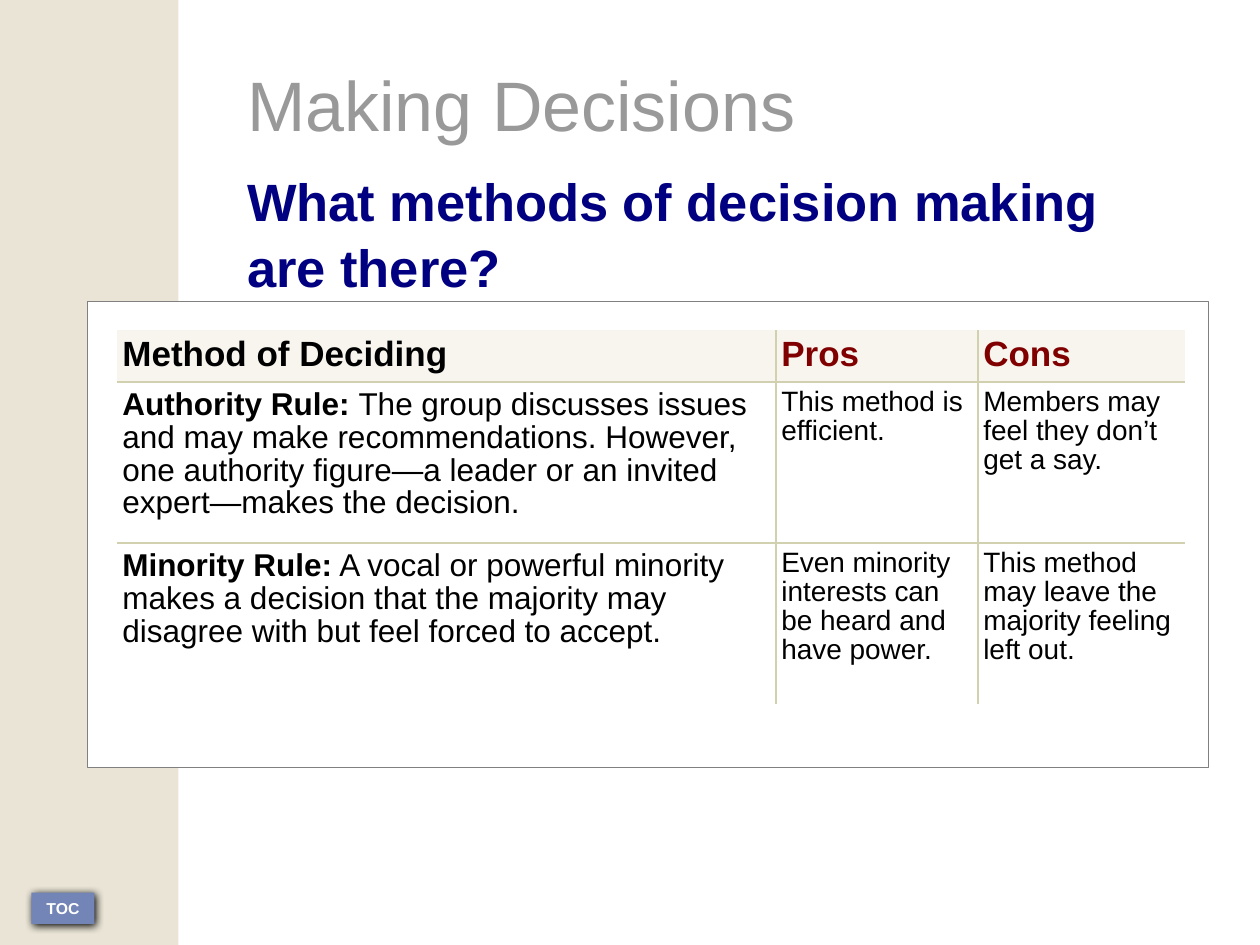
from lxml.etree import SubElement
from pptx import Presentation
from pptx.dml.color import RGBColor
from pptx.enum.shapes import MSO_SHAPE
from pptx.enum.text import MSO_ANCHOR, MSO_AUTO_SIZE, PP_ALIGN
from pptx.oxml import parse_xml
from pptx.oxml.ns import nsdecls, qn
from pptx.util import Pt

WHITE = RGBColor(0xFF, 0xFF, 0xFF)
BLACK = RGBColor(0, 0, 0)
SAND = RGBColor(0xE9, 0xE4, 0xD5)
CREAM = RGBColor(0xF7, 0xF5, 0xED)
OLIVE = RGBColor(0xD1, 0xD1, 0xB0)
GRAY = RGBColor(0x99, 0x99, 0x99)
OUTLINE = RGBColor(0x80, 0x80, 0x80)
NAVY = RGBColor(0, 0, 0x80)
MAROON = RGBColor(0x80, 0, 0)
BLUE = RGBColor(0x73, 0x84, 0xB6)


def add_block(kind, left, top, width, height, color):
    block = page.shapes.add_shape(kind, Pt(left), Pt(top), Pt(width), Pt(height))
    block.shadow.inherit = False
    block.fill.solid()
    block.fill.fore_color.rgb = color
    block.line.fill.background()
    return block


def add_span(para, text, size, color, bold):
    span = para.add_run()
    span.text = text
    for name, value in {"name": "Arial", "size": Pt(size), "bold": bold}.items():
        setattr(span.font, name, value)
    span.font.color.rgb = color


deck = Presentation()
deck.slide_width, deck.slide_height = Pt(720), Pt(540)
page = deck.slides.add_slide(deck.slide_layouts[5])

heading = page.shapes.title
for name, value in {"left": 134, "top": 27.4, "width": 550, "height": 475}.items():
    setattr(heading, name, Pt(value))
frame = heading.text_frame
frame.word_wrap = True
frame.auto_size = MSO_AUTO_SIZE.NONE
frame.vertical_anchor = MSO_ANCHOR.TOP
frame.margin_top = Pt(5.5)
lines = [
    ("Making Decisions", 40, GRAY, False, 11.5),
    ("What methods of decision making are there?", 30, NAVY, True, 2.9),
]
for index, (text, size, color, bold, after) in enumerate(lines):
    para = frame.add_paragraph() if index else frame.paragraphs[0]
    para.alignment = PP_ALIGN.LEFT
    para.line_spacing = 1.05
    para.space_after = Pt(after)
    add_span(para, text, size, color, bold)

add_block(MSO_SHAPE.RECTANGLE, 0, 0, 102, 540, SAND)

button = add_block(MSO_SHAPE.RECTANGLE, 18, 510, 36, 18, BLUE)
effects = button._element.spPr.find(qn("a:effectLst"))
effects.append(parse_xml(
    f'<a:outerShdw {nsdecls("a")} blurRad="{Pt(5)}" dist="{Pt(1.4)}" dir="2700000" '
    'algn="ctr" rotWithShape="0"><a:srgbClr val="000000"/></a:outerShdw>'))
button.text_frame.vertical_anchor = MSO_ANCHOR.MIDDLE
label = button.text_frame.paragraphs[0]
label.alignment = PP_ALIGN.CENTER
add_span(label, "TOC", 9, WHITE, True)

panel = add_block(MSO_SHAPE.ROUNDED_RECTANGLE, 50, 172.2, 640.6, 266.4, WHITE)
panel.adjustments[0] = 0
panel.line.color.rgb = OUTLINE
panel.line.width = Pt(0.71)

rows = [
    [[("Method of Deciding", True)], [("Pros", True)], [("Cons", True)]],
    [
        [("Authority Rule: ", True),
         ("The group discusses issues and may make recommendations. However, "
          "one authority figure—a leader or an invited expert—makes the decision.", False)],
        [("This method is efficient.", False)],
        [("Members may feel they don’t get a say.", False)],
    ],
    [
        [("Minority Rule:", True),
         (" A vocal or powerful minority makes a decision that the majority may "
          "disagree with but feel forced to accept.", False)],
        [("Even minority interests can be heard and have power.", False)],
        [("This method may leave the majority feeling left out.", False)],
    ],
]
widths = [376.6, 115.4, 118.2]
heights = [29.6, 92.2, 92.2]
table = page.shapes.add_table(
    3, 3, Pt(67), Pt(188.6), Pt(sum(widths)), Pt(sum(heights))).table
for column, width in zip(table.columns, widths):
    column.width = Pt(width)
for row, height in zip(table.rows, heights):
    row.height = Pt(height)

for r, row in enumerate(rows):
    for c, spans in enumerate(row):
        cell = table.cell(r, c)
        large = r == 0 or c == 0
        margins = {"left": 2.9, "right": 2.9, "top": 4.3 if large else 3.6, "bottom": 2.9}
        for side, value in margins.items():
            setattr(cell, f"margin_{side}", Pt(value))

        properties = cell._tc.get_or_add_tcPr()
        inner = {"lnL": c > 0, "lnR": c < 2, "lnT": r > 0, "lnB": r < 2}
        for tag, visible in inner.items():
            border = SubElement(properties, qn(f"a:{tag}"), w=str(Pt(1.42)))
            if visible:
                fill = SubElement(border, qn("a:solidFill"))
                SubElement(fill, qn("a:srgbClr"), val=str(OLIVE))
            else:
                SubElement(border, qn("a:noFill"))
        cell.fill.solid()
        cell.fill.fore_color.rgb = WHITE if r else CREAM

        para = cell.text_frame.paragraphs[0]
        para.line_spacing = 0.93
        size = 20 if r == 0 else 18 if c == 0 else 16
        color = MAROON if r == 0 and c else BLACK
        for text, bold in spans:
            add_span(para, text, size, color, bold)

deck.save("out.pptx")
